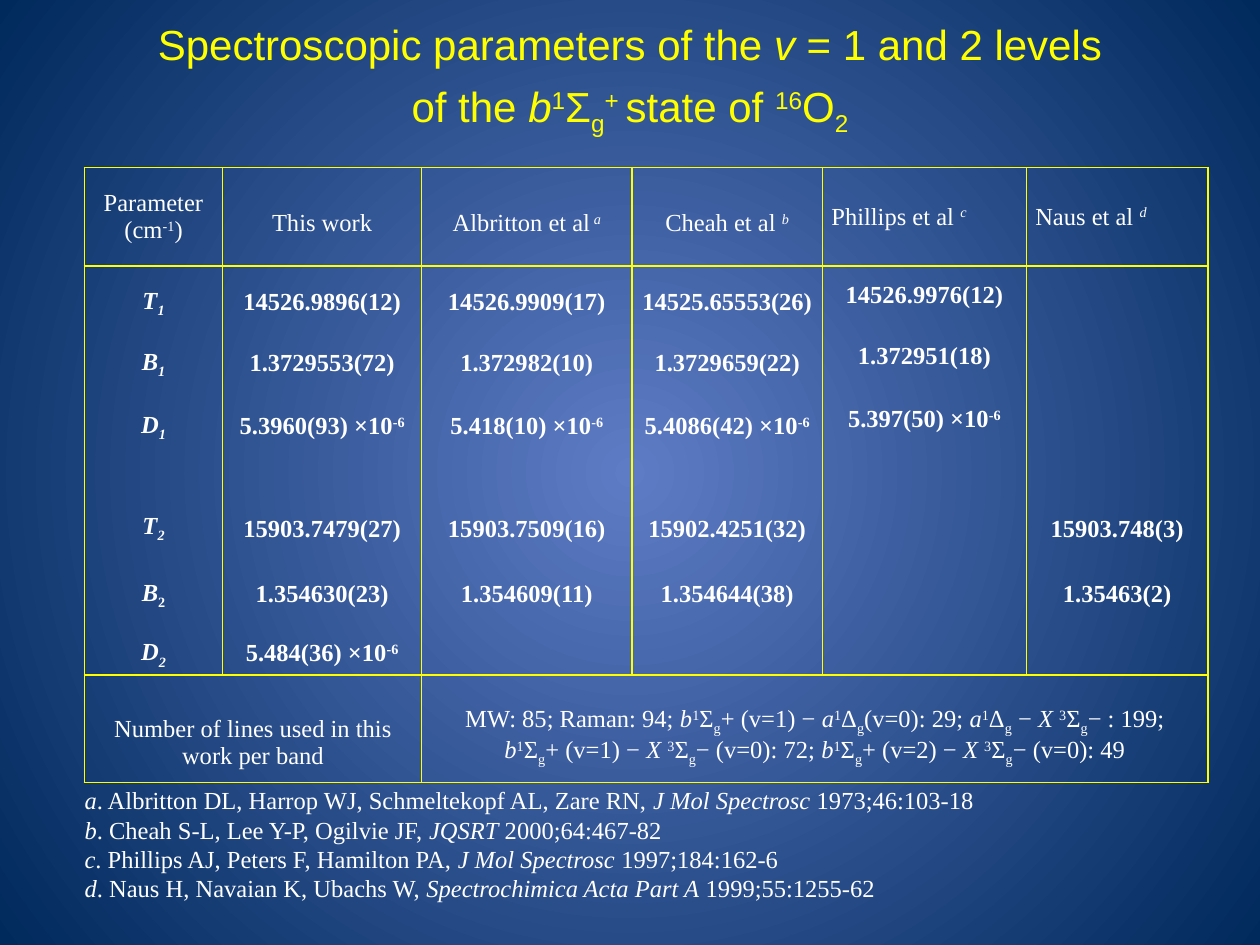
"""Build a slide comparing spectroscopic parameters of oxygen."""
from lxml.etree import SubElement
from pptx import Presentation
from pptx.dml.color import RGBColor
from pptx.enum.text import MSO_ANCHOR as Anchor, MSO_AUTO_SIZE as Fit, PP_ALIGN as Align
from pptx.oxml.ns import qn
from pptx.util import Cm, Pt

YELLOW = RGBColor(0xFF, 0xFF, 0x00)
WHITE = RGBColor(0xFF, 0xFF, 0xFF)
BLUE = RGBColor(0x5E, 0x7C, 0xC5)
NAVY = RGBColor(0x00, 0x29, 0x5C)
BASE = {"^": "30000", "_": "-25000"}

TITLE = "Spectroscopic parameters of the *v* = 1 and 2 levels\nof the *b*^1^Σ_g_^+ ^state of ^16^O_2_"
ROWS = [
    ["Parameter\n(cm^-1^)", "This work", "Albritton et al^* a*^", "Cheah et al ^*b*^",
     "Phillips et al ^*c*^", "Naus et al ^*d*^"],
    ["*T_1_*", "14526.9896(12)", "14526.9909(17)", "14525.65553(26)", "14526.9976(12)", ""],
    ["*B_1_*", "1.3729553(72)", "1.372982(10)", "1.3729659(22)", "1.372951(18)", ""],
    ["*D_1_*", "5.3960(93) ×10^-6^", "5.418(10) ×10^-6^", "5.4086(42) ×10^-6^", "5.397(50) ×10^-6^", ""],
    ["*T_2_*", "15903.7479(27)", "15903.7509(16)", "15902.4251(32)", "", "15903.748(3)"],
    ["*B*_2_", "1.354630(23)", "1.354609(11)", "1.354644(38)", "", "1.35463(2)"],
    ["*D_2_*", "5.484(36) ×10^-6^", "", "", "", ""],
    ["Number of lines used in this work per band", "",
     "MW: 85; Raman: 94; *b*^1^Σ_g_+ (v=1) − *a*^1^Δ_g_(v=0): 29; *a*^1^Δ_g_ − *X *^3^Σ_g_− : 199;\n"
     "*b*^1^Σ_g_+ (v=1) − *X *^3^Σ_g_− (v=0): 72; *b*^1^Σ_g_+ (v=2) − *X *^3^Σ_g_− (v=0): 49", "", "", ""],
]
NOTES = """*a*. Albritton DL, Harrop WJ, Schmeltekopf AL, Zare RN, *J Mol Spectrosc* 1973;46:103-18
*b*. Cheah S-L, Lee Y-P, Ogilvie JF, *JQSRT* 2000;64:467-82
*c*. Phillips AJ, Peters F, Hamilton PA, *J Mol Spectrosc* 1997;184:162-6
*d*. Naus H, Navaian K, Ubachs W, *Spectrochimica Acta Part A* 1999;55:1255-62"""
WIDTHS = [2.79, 4.01, 4.24, 3.84, 4.11, 3.66]
HEIGHTS = [1.98, 1.19, 1.27, 1.27, 2.11, 1.27, 1.14, 2.03]


def write(frame, text, size=14, face="Times New Roman", color=WHITE, bold=False,
          align=Align.CENTER, line=1.0):
    """Fill a frame; * toggles italics, ^ superscript and _ subscript."""
    for n, row in enumerate(text.split("\n")):
        para = frame.paragraphs[0] if n == 0 else frame.add_paragraph()
        para.alignment, para.line_spacing = align, line
        para.space_before = Pt(0)
        slant, shift, part = False, None, ""
        for char in row + "*":
            if char not in "*^_":
                part += char
                continue
            if part:
                run = para.add_run()
                run.text, part = part, ""
                font = run.font
                font.size, font.name, font.bold, font.italic = Pt(size), face, bold, slant
                font.color.rgb = color
                if shift:
                    run._r.get_or_add_rPr().set("baseline", BASE[shift])
            if char == "*":
                slant = not slant
            else:
                shift = None if shift == char else char


def edge(cell, sides):
    """Draw yellow lines on the given sides of a cell and none on the rest."""
    prop = cell._tc.get_or_add_tcPr()
    for n, side in enumerate("LRTB"):
        line = SubElement(prop, qn("a:ln" + side), w=str(Pt(1)))
        if side in sides:
            fill = SubElement(line, qn("a:solidFill"))
            SubElement(fill, qn("a:srgbClr"), val=str(YELLOW))
        else:
            SubElement(line, qn("a:noFill"))
        prop.insert(n, line)


deck = Presentation()
deck.slide_width, deck.slide_height = Cm(25.4), Cm(19.05)
slide = deck.slides.add_slide(deck.slide_layouts[1])

back = slide.background.fill
back.gradient()
for stop, color in zip(back.gradient_stops, (BLUE, NAVY)):
    stop.color.rgb = color
grad = slide._element.find(".//" + qn("a:gradFill"))
grad.remove(grad.find(qn("a:lin")))
path = SubElement(grad, qn("a:path"), path="circle")
SubElement(path, qn("a:fillToRect"), l="50000", t="50000", r="50000", b="50000")

title, body = slide.placeholders
title.left, title.top, title.width, title.height = Cm(1.9), Cm(0.43), Cm(21.6), Cm(2.08)
title.text_frame.vertical_anchor = Anchor.MIDDLE
title.text_frame.auto_size = Fit.NONE
write(title.text_frame, TITLE, size=24, face="Arial", color=YELLOW, line=1.2)

body.left, body.top, body.width, body.height = Cm(1.45), Cm(15.7), Cm(23.06), Cm(2.64)
body.text_frame.auto_size = Fit.SHAPE_TO_FIT_TEXT
write(body.text_frame, NOTES, align=Align.LEFT)
for para in body.text_frame.paragraphs:
    prop = para._p.get_or_add_pPr()
    prop.set("marL", str(Cm(0.97)))
    prop.set("indent", str(-Cm(0.97)))
    SubElement(prop, qn("a:buNone"))

frame = slide.shapes.add_table(len(ROWS), len(WIDTHS), Cm(1.7), Cm(3.38), Cm(22.65), Cm(12.26))
table = frame.table
table.first_row = table.horz_banding = False
for col, width in zip(table.columns, WIDTHS):
    col.width = Cm(width)
for row, height in zip(table.rows, HEIGHTS):
    row.height = Cm(height)
last = len(ROWS) - 1
table.cell(last, 0).merge(table.cell(last, 1))
table.cell(last, 2).merge(table.cell(last, 5))

for r, row in enumerate(ROWS):
    sides = "LR" + "T" * (r in (0, 1, last)) + "B" * (r in (0, last - 1, last))
    for c, text in enumerate(row):
        cell = table.cell(r, c)
        cell.fill.background()
        edge(cell, sides)
        cell.margin_left = cell.margin_right = Cm(0 if r == 4 else 0.18)
        cell.margin_top = Cm(0.57 if r == last else 0)
        cell.margin_bottom = Cm(0.25 if r == 4 or (r, c) == (last, 2) else 0)
        cell.vertical_anchor = Anchor.BOTTOM if r == 4 else Anchor.MIDDLE
        tight = r == last or (r, c) == (0, 0) or (c > 3 and r != 5)
        if text:
            write(cell.text_frame, text, bold=0 < r < last, line=1.0 if tight else 1.5,
                  align=Align.LEFT if r == 0 and c > 3 else Align.CENTER)

deck.save("out.pptx")
